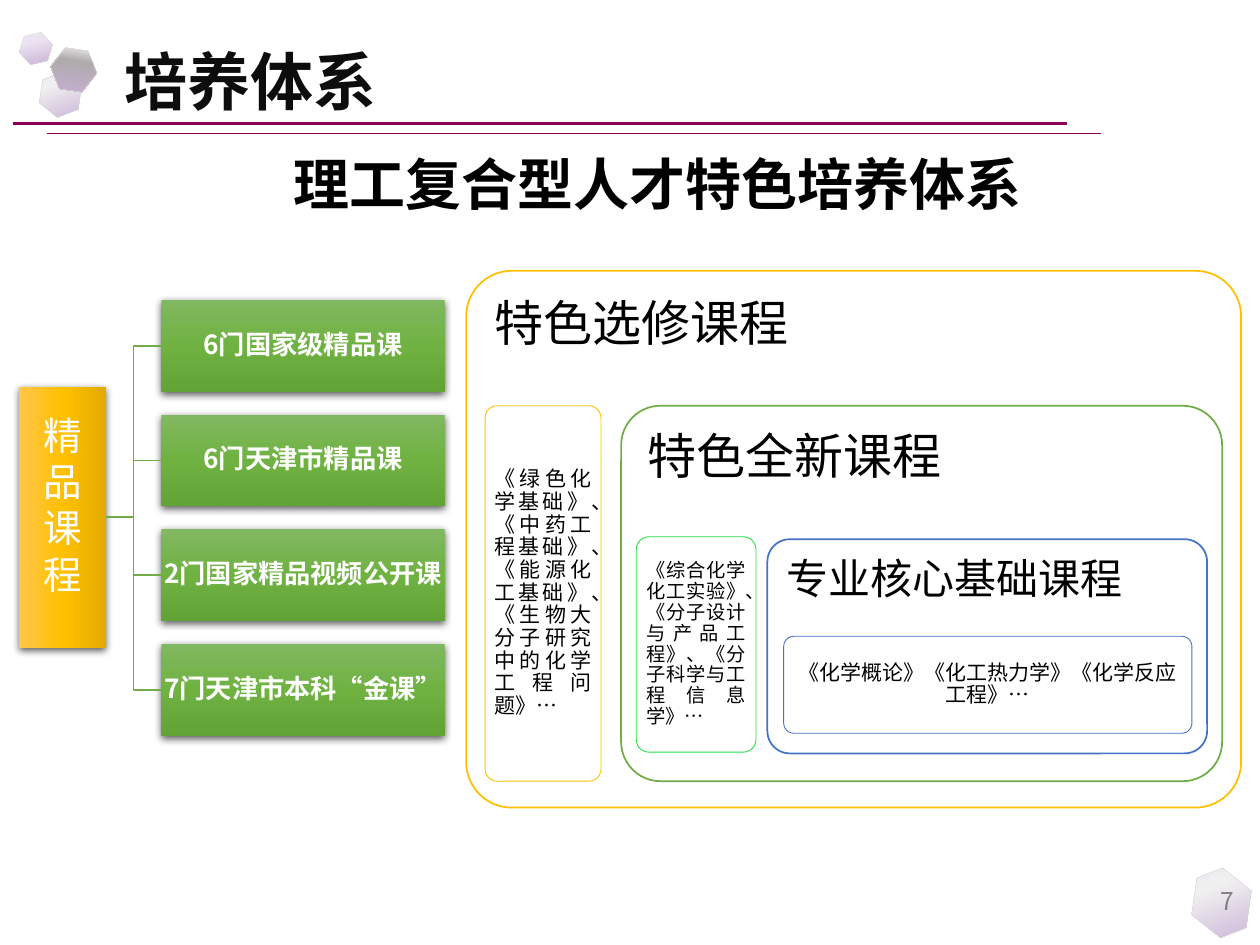
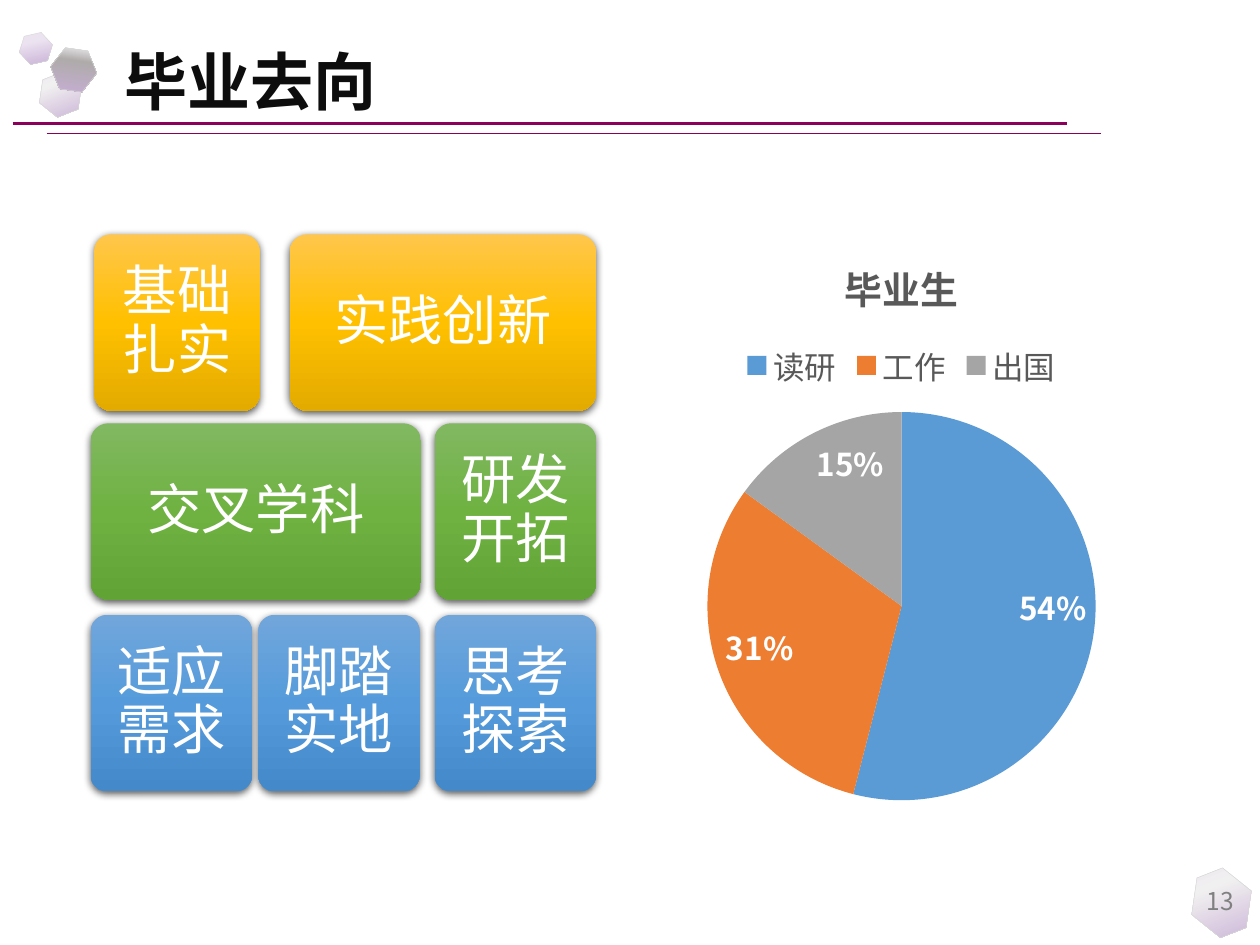
from dataclasses import dataclass
from typing import Any, Optional

from lxml.etree import SubElement
from pptx import Presentation
from pptx.chart.data import CategoryChartData
from pptx.dml.color import RGBColor
from pptx.enum.chart import XL_CHART_TYPE as ChartType
from pptx.enum.chart import XL_LABEL_POSITION as LabelPosition
from pptx.enum.chart import XL_LEGEND_POSITION as LegendPosition
from pptx.enum.shapes import MSO_CONNECTOR as Connector
from pptx.enum.shapes import MSO_SHAPE as Preset
from pptx.enum.text import MSO_ANCHOR as Anchor
from pptx.enum.text import PP_ALIGN as Align
from pptx.oxml.ns import qn
from pptx.util import Inches, Pt

Box = tuple[float, float, float, float]
Gradient = tuple[tuple[int, str], ...]


@dataclass(frozen=True)
class Theme:
    font: str = "Noto Sans CJK SC"
    black: str = "000000"
    title_ink: str = "0D0D0D"
    white: str = "FFFFFF"
    number_ink: str = "808080"
    chart_ink: str = "595959"
    rule: str = "8A005B"
    hexagon_edge: str = "D7D7D7"
    amber: str = "FFC000"
    green: str = "70AD47"
    bright_green: str = "23E148"
    blue: str = "4472C4"
    slices: tuple[str, ...] = ("5B9BD5", "ED7D31", "A5A5A5")
    amber_fade: Gradient = ((0, "FFC64B"), (50, "FFC000"), (100, "E3AB00"))
    green_fade: Gradient = ((0, "81B861"), (50, "6FB242"), (100, "62A336"))
    blue_fade: Gradient = ((0, "71A6DB"), (50, "559BDB"), (100, "448ACA"))
    pale_fade: Gradient = ((0, "ECE3F1"), (33, "F1F0F0"), (100, "C7AED5"))
    lilac_fade: Gradient = ((0, "ECE3F1"), (33, "ECE3F1"), (100, "C7AED5"))
    grey_fade: Gradient = ((0, "F5F5F5"), (33, "AFABAB"), (100, "C7AED5"))
    title: float = 36
    heading: float = 32
    tile: float = 31
    panel: float = 28
    core: float = 24
    spine: float = 22
    chart_title: float = 21.6
    chart: float = 18
    leaf: float = 15
    number: float = 14
    courses: float = 12
    small_courses: float = 11


THEME = Theme()


@dataclass(frozen=True)
class Words:
    text: str
    size: float
    color: str = THEME.black
    bold: bool = False
    align: Align = Align.LEFT
    anchor: Anchor = Anchor.TOP
    inset: tuple[float, float] = (0.1, 0.05)
    spacing: float = 1.0


@dataclass(frozen=True)
class Card:
    at: Box
    words: Optional[Words] = None
    preset: Preset = Preset.ROUNDED_RECTANGLE
    adjustments: tuple[float, ...] = ()
    fade: Gradient = ()
    angle: float = 270
    rotation: float = 0
    edge: Optional[str] = None
    edge_width: float = 1
    shadow: bool = False


HEXAGONS = [
    Card(at, preset=Preset.HEXAGON, adjustments=(0.287, 1.155), fade=fade,
         rotation=rotation, edge=THEME.hexagon_edge, edge_width=0.25)
    for at, rotation, fade in [
        ((9.44, 6.91, 0.51, 0.51), 338.5, THEME.pale_fade),
        ((0.3, 0.59, 0.36, 0.32), 338.5, THEME.pale_fade),
        ((0.15, 0.27, 0.27, 0.23), 347.2, THEME.lilac_fade),
        ((0.4, 0.39, 0.37, 0.33), 8.1, THEME.grey_fade),
    ]
]


def rgb(color: str) -> RGBColor:
    return RGBColor.from_string(color)


def set_all(target: Any, values: dict[str, Any]) -> None:
    for name, value in values.items():
        setattr(target, name, value)


def style_font(font: Any, size: float, color: str, bold: bool = False) -> None:
    set_all(font, {"name": THEME.font, "size": Pt(size), "bold": bold})
    font.color.rgb = rgb(color)
    SubElement(font._rPr, qn("a:ea"), typeface=THEME.font)


def write(shape: Any, words: Words) -> None:
    frame = shape.text_frame
    across, down = (Inches(gap) for gap in words.inset)
    set_all(frame, {"word_wrap": True, "vertical_anchor": words.anchor,
                    "margin_left": across, "margin_right": across,
                    "margin_top": down, "margin_bottom": down})
    for index, line in enumerate(words.text.split("\n")):
        para = frame.add_paragraph() if index else frame.paragraphs[0]
        set_all(para, {"alignment": words.align, "line_spacing": words.spacing})
        span = para.add_run()
        span.text = line
        style_font(span.font, words.size, words.color, words.bold)


def add_label(page: Any, at: Box, words: Words) -> None:
    write(page.shapes.add_textbox(*map(Inches, at)), words)


def paint_gradient(shape: Any, fade: Gradient, angle: float) -> None:
    shape.fill.gradient()
    shape.fill.gradient_angle = angle
    stops = next(shape._element.spPr.iter(qn("a:gsLst")))
    stops.clear()
    for position, color in fade:
        stop = SubElement(stops, qn("a:gs"), pos=str(position * 1000))
        SubElement(stop, qn("a:srgbClr"), val=color)


def drop_shadow(shape: Any) -> None:
    effects = shape._element.spPr.find(qn("a:effectLst"))
    shadow = SubElement(effects, qn("a:outerShdw"), blurRad=str(Pt(4.5)),
                        dist=str(Pt(1.5)), dir="5400000", rotWithShape="0")
    color = SubElement(shadow, qn("a:srgbClr"), val=THEME.black)
    SubElement(color, qn("a:alpha"), val="63000")


def add_card(page: Any, card: Card) -> Any:
    shape = page.shapes.add_shape(card.preset, *map(Inches, card.at))
    shape.shadow.inherit = False
    shape.rotation = card.rotation
    for index, value in enumerate(card.adjustments):
        shape.adjustments[index] = value
    if card.fade:
        paint_gradient(shape, card.fade, card.angle)
    else:
        shape.fill.solid()
        shape.fill.fore_color.rgb = rgb(THEME.white)
    if card.edge:
        shape.line.color.rgb = rgb(card.edge)
        shape.line.width = Pt(card.edge_width)
    else:
        shape.line.fill.background()
    if card.shadow:
        drop_shadow(shape)
    if card.words:
        write(shape, card.words)
    return shape


def add_line(page: Any, kind: Connector, ends: Box, color: str, width: float) -> Any:
    line = page.shapes.add_connector(kind, *map(Inches, ends))
    line.line.color.rgb = rgb(color)
    line.line.width = Pt(width)
    SubElement(line._element.spPr, qn("a:effectLst"))
    return line


def add_page(deck: Any, title: str, number: int) -> Any:
    page = deck.slides.add_slide(deck.slide_layouts[6])
    for hexagon in HEXAGONS:
        add_card(page, hexagon)
    for left, top, width in [(0.1, 0.98, 2.25), (0.37, 1.06, 0.5)]:
        add_line(page, Connector.STRAIGHT, (left, top, left + 8.37, top), THEME.rule, width)
    add_label(page, (7.64, 6.95, 2.25, 0.4),
              Words(str(number), THEME.number, THEME.number_ink,
                    align=Align.RIGHT, anchor=Anchor.MIDDLE))
    add_label(page, (0.89, 0.29, 7.61, 0.71),
              Words(title, THEME.title, THEME.title_ink, bold=True))
    return page


def add_panel(page: Any, at: Box, title: str, size: float, rounding: float,
              edge: str, inset: float = 0.12) -> None:
    words = Words(title, size, inset=(inset, inset), spacing=0.9)
    add_card(page, Card(at, words, adjustments=(rounding,), edge=edge))


def add_courses(page: Any, at: Box, text: str, size: float, edge: str,
                align: Align = Align.JUSTIFY) -> None:
    words = Words(text, size, align=align, anchor=Anchor.MIDDLE,
                  inset=(0.05, 0.05), spacing=0.9)
    add_card(page, Card(at, words, adjustments=(0.105,), edge=edge, edge_width=0.5))


def add_course_tree(page: Any) -> None:
    spine = add_card(page, Card(
        (0.15, 3.07, 0.69, 2.07),
        Words("精\n品\n课\n程", THEME.spine, THEME.white, align=Align.CENTER,
              inset=(0.1, 0.2)),
        preset=Preset.RECTANGLE, fade=THEME.amber_fade, angle=0, shadow=True))
    leaves = ["6门国家级精品课", "6门天津市精品课", "2门国家精品视频公开课", "7门天津市本科“金课”"]
    for row, text in enumerate(leaves):
        top = 2.38 + 0.91 * row
        words = Words(text, THEME.leaf, THEME.white, True, Align.CENTER,
                      Anchor.MIDDLE, (0.01, 0.01), 0.9)
        leaf = add_card(page, Card((1.28, top, 2.25, 0.73), words, Preset.RECTANGLE,
                                   fade=THEME.green_fade, shadow=True))
        branch = add_line(page, Connector.ELBOW, (0.84, 4.1, 1.28, top + 0.36), THEME.green, 1)
        branch.begin_connect(spine, 3)
        branch.end_connect(leaf, 1)


def build_training(deck: Any) -> None:
    page = add_page(deck, "培养体系", 7)
    add_label(page, (2.23, 1.14, 6.38, 0.64),
              Words("理工复合型人才特色培养体系", THEME.heading, bold=True))
    add_panel(page, (3.7, 2.15, 6.15, 4.26), "特色选修课程", THEME.panel, 0.085, THEME.amber)
    add_courses(page, (3.85, 3.22, 0.92, 2.98),
                "《绿色化学基础》、《中药工程基础》、《能源化工基础》、《生物大分子研究中的化学工程问题》…",
                THEME.courses, THEME.amber)
    add_panel(page, (4.93, 3.22, 4.77, 2.98), "特色全新课程", THEME.panel, 0.105, THEME.green)
    add_courses(page, (5.05, 4.26, 0.95, 1.71),
                "《综合化学化工实验》、《分子设计与产品工程》、《分子科学与工程信息学》…",
                THEME.small_courses, THEME.bright_green)
    add_panel(page, (6.09, 4.28, 3.49, 1.7), "专业核心基础课程", THEME.core, 0.105,
              THEME.blue, 0.1)
    add_courses(page, (6.22, 5.05, 3.24, 0.77), "《化学概论》《化工热力学》《化学反应工程》…",
                THEME.courses, THEME.blue, Align.CENTER)
    add_course_tree(page)


def add_destination_chart(page: Any) -> None:
    data = CategoryChartData()
    data.categories = ["读研", "工作", "出国"]
    data.add_series("毕业生", (54, 31, 15))
    at = map(Inches, (3.59, 1.83, 7.13, 4.66))
    chart = page.shapes.add_chart(ChartType.PIE, *at, data).chart
    style_font(chart.font, THEME.chart, THEME.black)
    set_all(chart, {"has_title": True, "has_legend": True})
    chart.chart_title.include_in_layout = False
    span = chart.chart_title.text_frame.paragraphs[0].add_run()
    span.text = "毕业生"
    style_font(span.font, THEME.chart_title, THEME.chart_ink, True)
    set_all(chart.legend, {"position": LegendPosition.TOP, "include_in_layout": False})
    style_font(chart.legend.font, THEME.chart, THEME.chart_ink)
    plot = chart.plots[0]
    set_all(plot, {"vary_by_categories": True, "has_data_labels": True})
    set_all(plot.data_labels, {"show_percentage": True, "show_value": False,
                               "number_format": "0%", "number_format_is_linked": False,
                               "position": LabelPosition.INSIDE_END})
    style_font(plot.data_labels.font, THEME.chart, THEME.white, True)
    for index, color in enumerate(THEME.slices):
        fill = plot.series[0].points[index].format.fill
        fill.solid()
        fill.fore_color.rgb = rgb(color)


def build_destinations(deck: Any) -> None:
    page = add_page(deck, "毕业去向", 13)
    add_destination_chart(page)
    rows = [
        (1.86, THEME.amber_fade, [("基础扎实", 0.75, 1.31), ("实践创新", 2.3, 2.43)]),
        (3.36, THEME.green_fade, [("交叉学科", 0.72, 2.62), ("研发开拓", 3.45, 1.28)]),
        (4.88, THEME.blue_fade, [("适应需求", 0.72, 1.28), ("脚踏实地", 2.05, 1.28),
                                 ("思考探索", 3.45, 1.28)]),
    ]
    for top, fade, tiles in rows:
        for text, left, width in tiles:
            words = Words(text, THEME.tile, THEME.white, align=Align.CENTER,
                          anchor=Anchor.MIDDLE, inset=(0.13, 0.13), spacing=0.9)
            add_card(page, Card((left, top, width, 1.4), words, adjustments=(0.1,),
                                fade=fade, shadow=True))


def main() -> None:
    """Build the training and graduate destination slides."""
    deck = Presentation()
    set_all(deck, {"slide_width": Inches(10), "slide_height": Inches(7.5)})
    build_training(deck)
    build_destinations(deck)
    deck.save("out.pptx")


if __name__ == "__main__":
    main()
